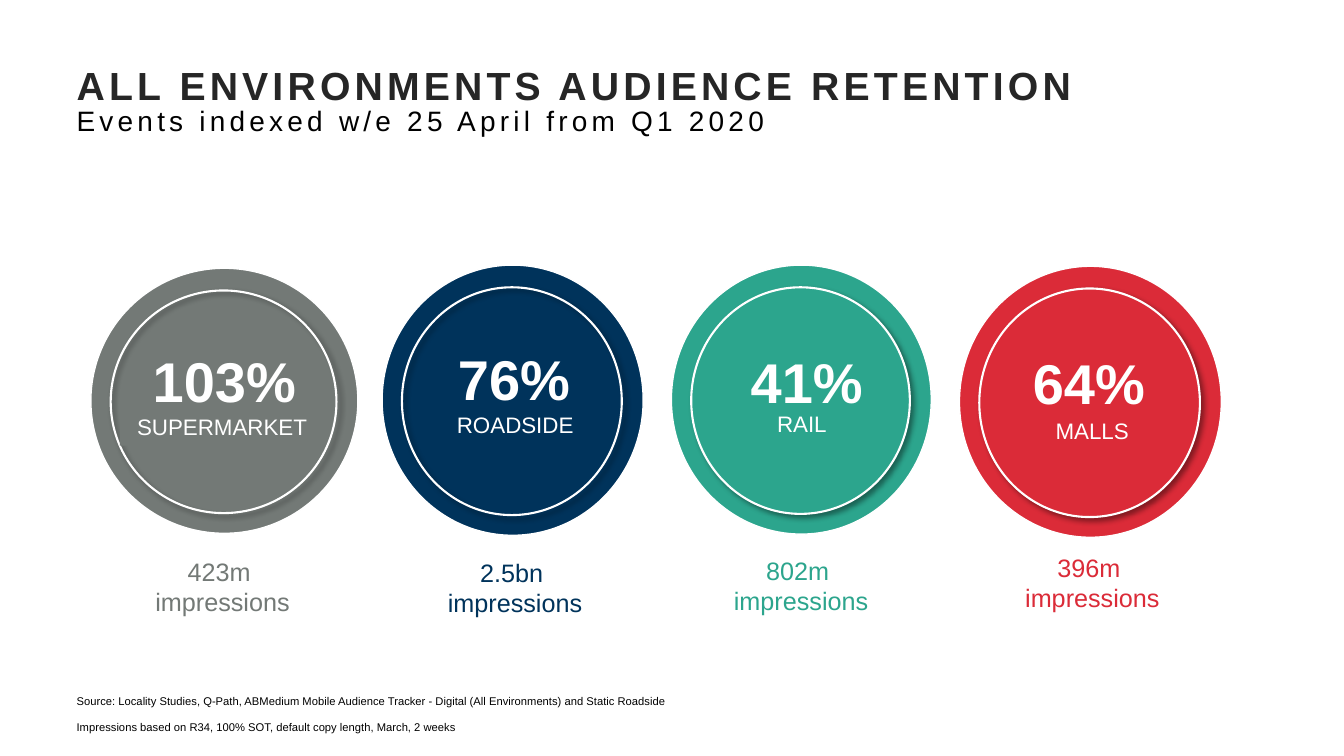
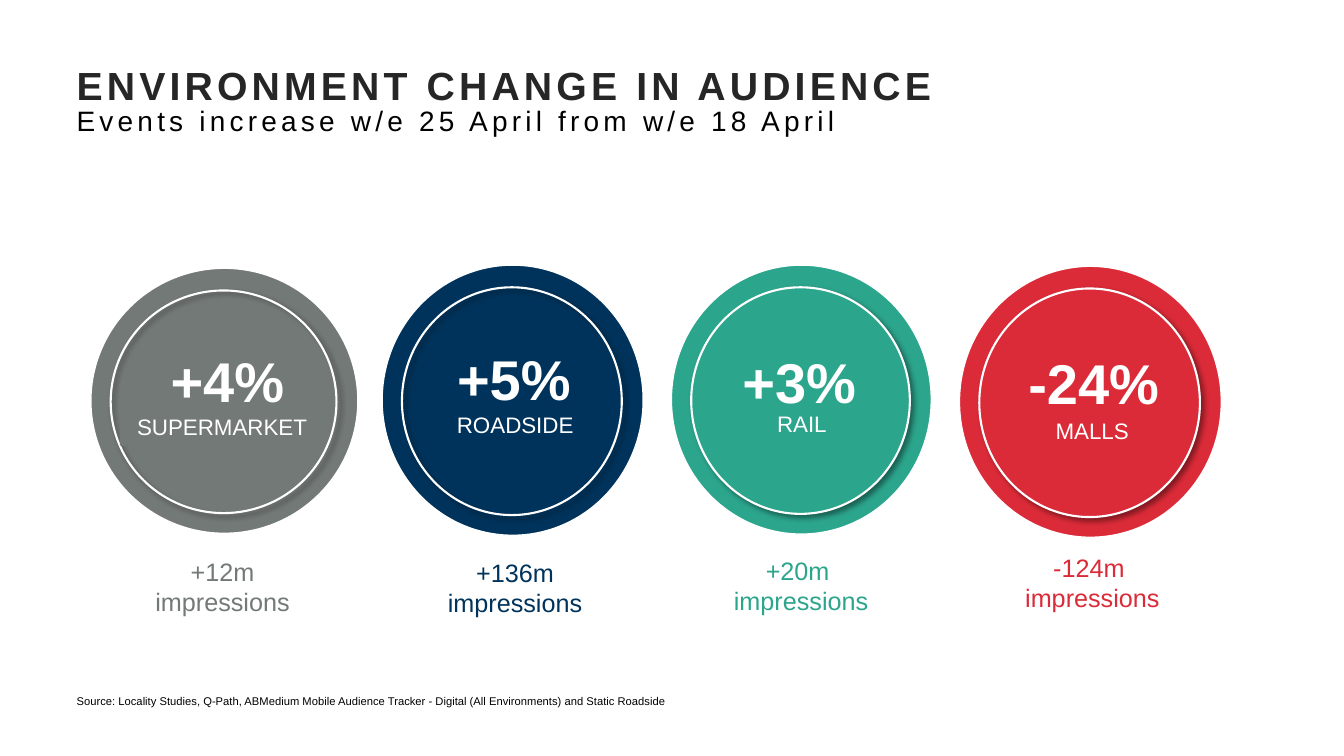
from lxml import etree
from pptx import Presentation
from pptx.dml.color import RGBColor
from pptx.enum.shapes import MSO_SHAPE
from pptx.enum.text import MSO_ANCHOR, MSO_AUTO_SIZE, PP_ALIGN
from pptx.oxml import parse_xml
from pptx.oxml.ns import nsdecls, qn
from pptx.util import Cm, Pt

OVAL = MSO_SHAPE.OVAL
TOP = MSO_ANCHOR.TOP
NO_AUTOFIT = MSO_AUTO_SIZE.NONE
FIT_SHAPE = MSO_AUTO_SIZE.SHAPE_TO_FIT_TEXT
LEFT = PP_ALIGN.LEFT
CENTER = PP_ALIGN.CENTER


class Theme:
    font = "Arial"
    white = RGBColor.from_string("FFFFFF")
    black = RGBColor.from_string("000000")
    heading = RGBColor.from_string("262626")
    gray = RGBColor.from_string("737976")
    navy = RGBColor.from_string("00335B")
    green = RGBColor.from_string("2CA58D")
    red = RGBColor.from_string("DB2B38")
    title_size = 28
    subtitle_size = 20
    value_size = 40
    label_size = 16
    caption_size = 18
    source_size = 8
    title_tracking = 3


SOURCE = ("Source: Locality Studies, Q-Path, ABMedium Mobile Audience Tracker"
          " - Digital (All Environments) and Static Roadside")

ENVIRONMENTS = [
    dict(name="SUPERMARKET", color=Theme.gray, ring_filled=False,
         disc=(2.29, 6.76, 6.73, 6.68), value_top=8.6,
         label=(3.02, 10.29, 5.16), caption=(2.51, 13.89)),
    dict(name="ROADSIDE", color=Theme.navy, ring_filled=False,
         disc=(9.63, 6.68, 6.58, 6.81), value_top=8.56,
         label=(10.57, 10.24, 4.83), caption=(9.88, 13.92)),
    dict(name="RAIL", color=Theme.green, ring_filled=True,
         disc=(16.92, 6.68, 6.55, 6.78), value_top=8.64,
         label=(17.81, 10.21, 4.8), caption=(17.09, 13.87)),
    dict(name="MALLS", color=Theme.red, ring_filled=True,
         disc=(24.18, 6.71, 6.6, 6.83), value_top=8.66,
         label=(26.04, 10.39, 2.97), caption=(24.43, 13.79)),
]

SLIDES = [
    dict(title="ALL ENVIRONMENTS AUDIENCE RETENTION",
         subtitle="Events indexed w/e 25 April from Q1 2020",
         sources=[SOURCE, "Impressions based on R34, 100% SOT, default copy length, March, 2 weeks"],
         figures=[("103%", 5.65, "423m "), ("76%", 12.95, "2.5bn "),
                  ("41%", 20.33, "802m "), ("64%", 27.44, "396m ")]),
    dict(title="ENVIRONMENT CHANGE IN AUDIENCE",
         subtitle="Events increase w/e 25 April from w/e 18 April",
         sources=[SOURCE],
         figures=[("+4%", 5.73, "+12m"), ("+5%", 12.95, "+136m"),
                  ("+3%", 20.14, "+20m "), ("-24%", 27.56, "-124m ")]),
]

VALUE_WIDTH = 4.8


def write_text(paragraph, text, size, color, bold=False, tracking=0, align=LEFT):
    paragraph.alignment = align
    run = paragraph.add_run()
    run.text = text
    run.font.name = Theme.font
    run.font.size = Pt(size)
    run.font.bold = bold
    run.font.color.rgb = color
    if tracking:
        run.font._element.set("spc", str(tracking * 100))


def add_text_box(shapes, box, lines, size, color, bold=False, fill=None):
    shape = shapes.add_textbox(*map(Cm, box))
    if fill is not None:
        shape.fill.solid()
        shape.fill.fore_color.rgb = fill
    frame = shape.text_frame
    frame.word_wrap = True
    frame.auto_size = FIT_SHAPE
    for index, line in enumerate(lines):
        paragraph = frame.add_paragraph() if index else frame.paragraphs[0]
        write_text(paragraph, line, size, color, bold=bold, align=CENTER)


presentation = Presentation()
presentation.slide_width = Cm(33.87)
presentation.slide_height = Cm(19.05)

for content in SLIDES:
    slide = presentation.slides.add_slide(presentation.slide_layouts[1])
    title, sources = slide.shapes.title, slide.placeholders[1]

    for placeholder, top, height in ((title, 1.73, 2.79), (sources, 17.53, 0.99)):
        placeholder.left, placeholder.top = Cm(1.93), Cm(top)
        placeholder.width, placeholder.height = Cm(30), Cm(height)
        frame = placeholder.text_frame
        frame.margin_left = frame.margin_top = frame.margin_right = frame.margin_bottom = 0
        frame.vertical_anchor = TOP
        frame.auto_size = NO_AUTOFIT
        frame.word_wrap = True

    paragraph = title.text_frame.paragraphs[0]
    paragraph.line_spacing = 0.85
    write_text(paragraph, content["title"], Theme.title_size, Theme.heading,
               bold=True, tracking=Theme.title_tracking)
    paragraph.add_line_break()
    write_text(paragraph, content["subtitle"], Theme.subtitle_size, Theme.black,
               tracking=Theme.title_tracking)

    for index, line in enumerate(content["sources"]):
        frame = sources.text_frame
        paragraph = frame.add_paragraph() if index else frame.paragraphs[0]
        paragraph.line_spacing = 0.9
        paragraph.space_before = Pt(10)
        write_text(paragraph, line, Theme.source_size, Theme.black)
        properties = paragraph._p.get_or_add_pPr()
        properties.set("marL", "0")
        properties.set("indent", "0")
        etree.SubElement(properties, qn("a:buNone"))

    for environment, (value, center, impressions) in zip(ENVIRONMENTS, content["figures"]):
        color = environment["color"]
        left, top, width, height = environment["disc"]
        badge = slide.shapes.add_group_shape().shapes

        disc = badge.add_shape(OVAL, Cm(left), Cm(top), Cm(width), Cm(height))
        ring = badge.add_shape(OVAL, Cm(left + 0.5), Cm(top + 0.56),
                               Cm(width - 1.04), Cm(height - 1.07))
        for shape, filled, line_width in ((disc, True, 1),
                                          (ring, environment["ring_filled"], 1.5)):
            if filled:
                shape.fill.solid()
                shape.fill.fore_color.rgb = color
            else:
                shape.fill.background()
            shape.line.color.rgb = Theme.white
            shape.line.width = Pt(line_width)
            shape.shadow.inherit = False
        ring._element.spPr.find(qn("a:effectLst")).append(parse_xml(
            f'<a:outerShdw {nsdecls("a")} blurRad="{Pt(4)}" dist="{Pt(3)}" dir="2700000"'
            ' algn="tl" rotWithShape="0"><a:srgbClr val="000000"><a:alpha val="40000"/>'
            '</a:srgbClr></a:outerShdw>'))

        add_text_box(badge, (center - VALUE_WIDTH / 2, environment["value_top"], VALUE_WIDTH, 1.96),
                     [value], Theme.value_size, Theme.white, bold=True)
        add_text_box(badge, (*environment["label"], 0.94), [environment["name"]],
                     Theme.label_size, Theme.white, fill=color)
        add_text_box(slide.shapes, (*environment["caption"], 6.2, 1.8),
                     [impressions, "impressions"], Theme.caption_size, color)

presentation.save("out.pptx")
